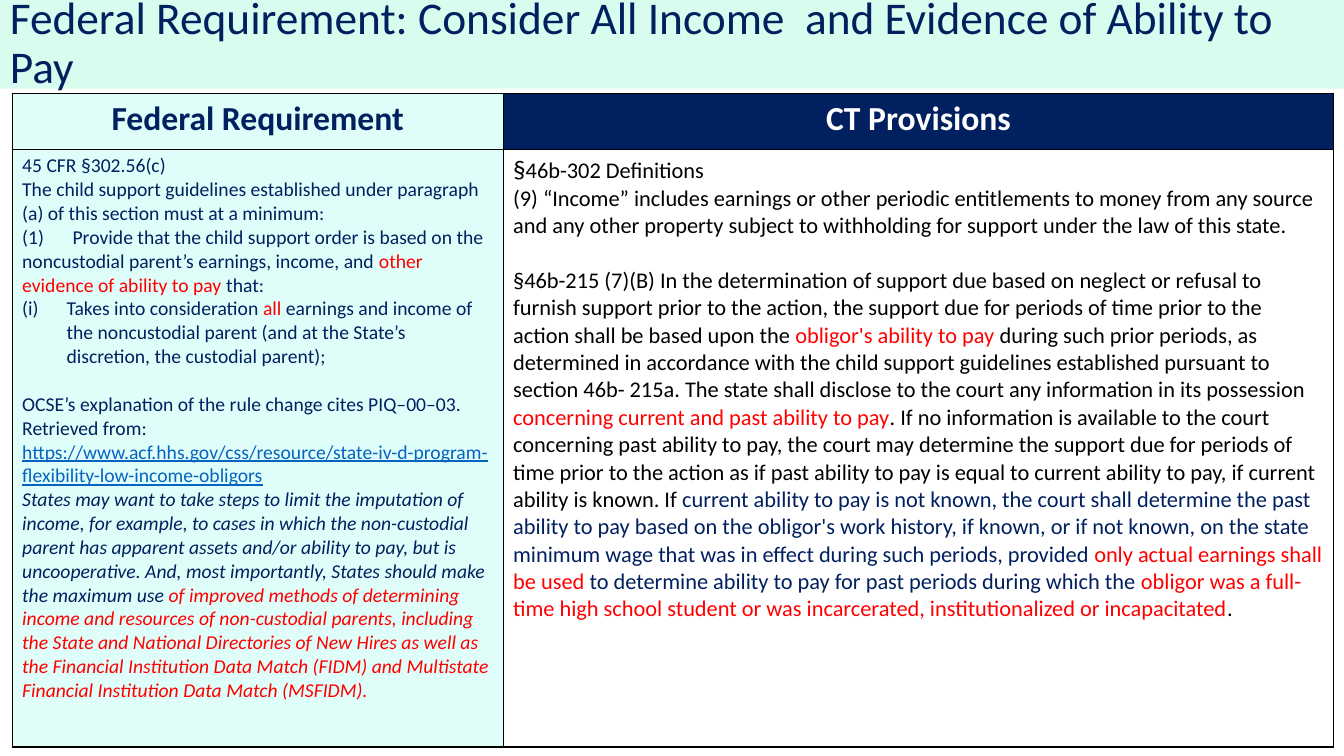
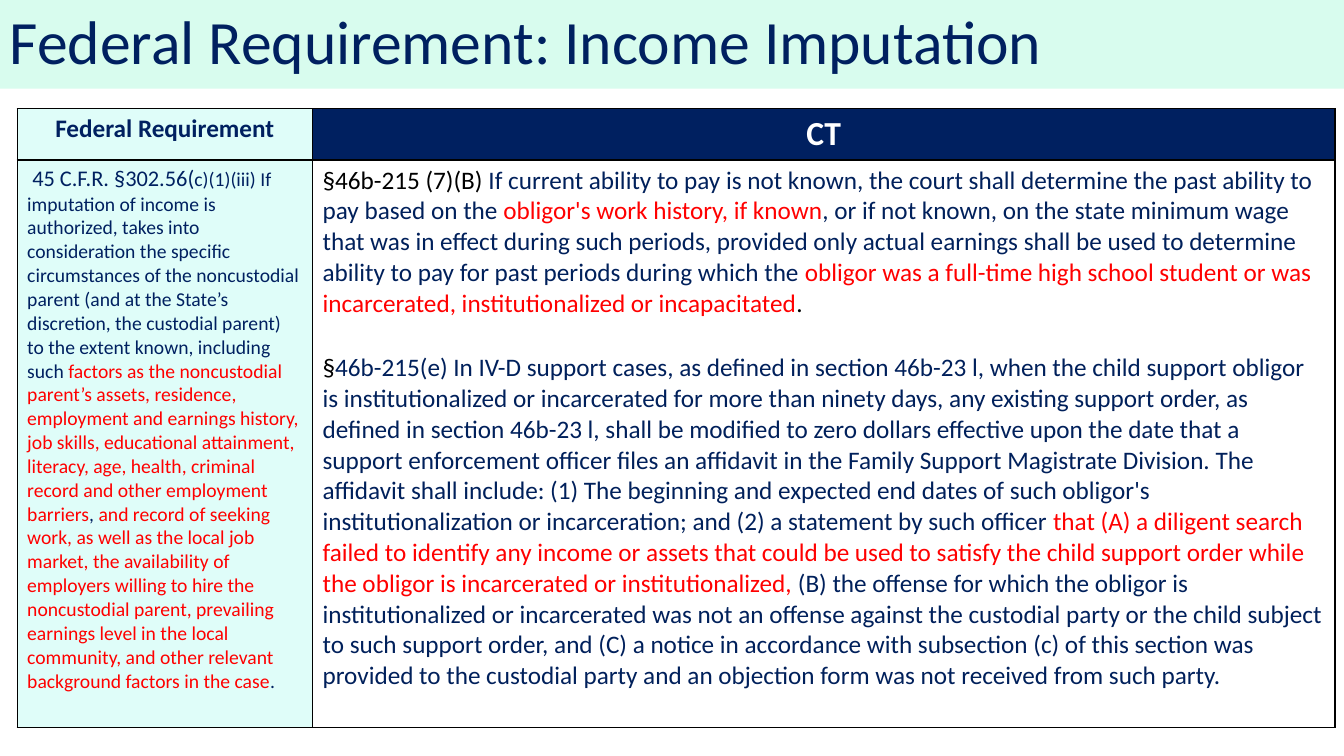
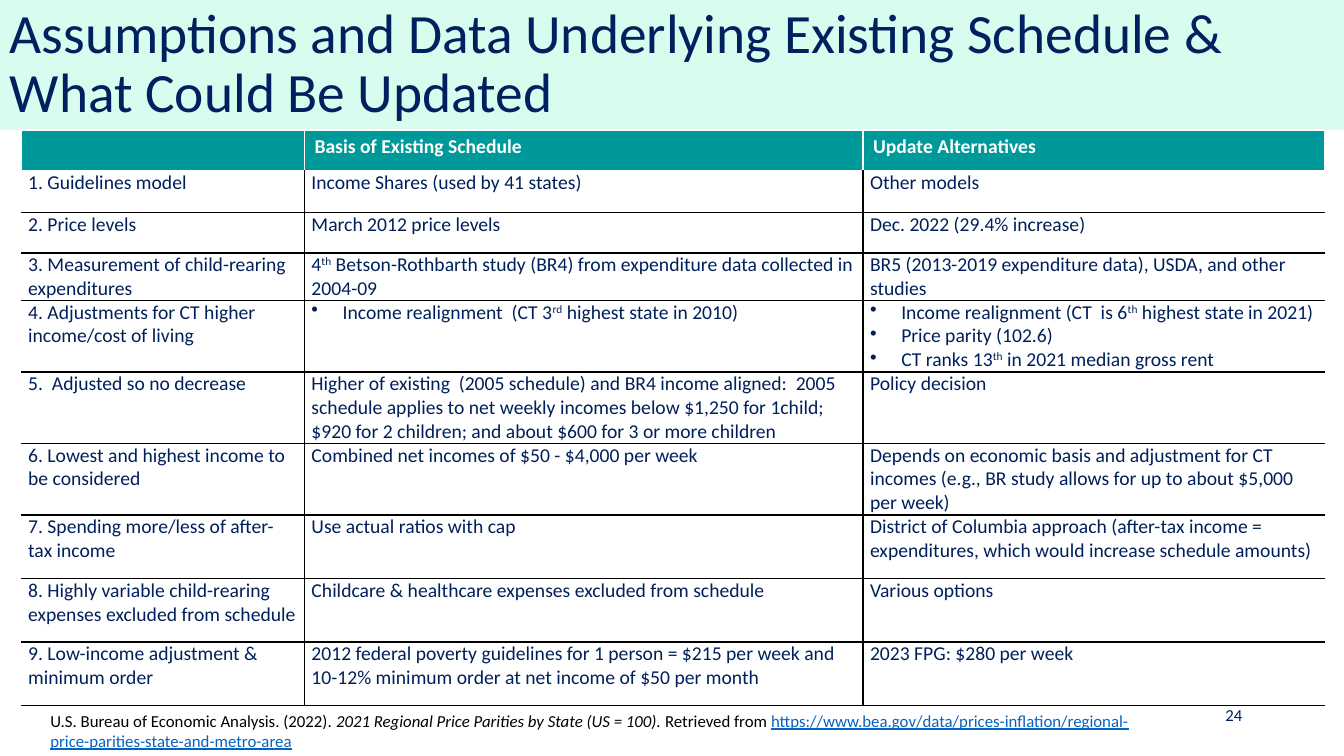
from dataclasses import dataclass, field

import pptx
import pptx.dml.color
import pptx.enum.shapes
import pptx.enum.text
import pptx.oxml
import pptx.oxml.ns
import pptx.util

Inches = pptx.util.Inches
Pt = pptx.util.Pt
ALIGN = pptx.enum.text.PP_ALIGN
ANCHOR = pptx.enum.text.MSO_ANCHOR


class Theme:
    font = "Calibri"
    navy = "002060"
    deep_navy = "00205B"
    red = "FF0000"
    black = "000000"
    white = "FFFFFF"
    link = "0563C1"
    band = "D8FCEE"
    federal = "DFFDF9"
    teal = "009999"
    small, body, medium, large, heading = 12, 14, 16, 18, 24
    width, height = 13.33, 7.5


@dataclass
class Span:
    """A piece of text; unset values come from the box or cell around it."""
    text: str
    color: str = None
    size: float = None
    italic: bool = False
    underline: bool = False
    raised: bool = False


@dataclass
class Para:
    spans: list
    before: float = 0
    bullet: str = None
    left: float = 0
    first: float = 0
    tab: float = None


@dataclass
class Cell:
    paras: list
    fill: str = Theme.white
    color: str = Theme.navy
    size: float = Theme.body
    bold: bool = False
    align: ALIGN = ALIGN.LEFT
    margins: tuple = (0.1, 0.05)
    borders: dict = field(default_factory=lambda: dict.fromkeys("LRTB", Theme.black))


def red(text, **style):
    return Span(text, Theme.red, **style)


def black(text, **style):
    return Span(text, Theme.black, **style)


def link(text):
    return Span(text, Theme.link, underline=True)


def raised(text):
    return Span(text, raised=True)


def bulleted(*spans):
    return Para(list(spans), bullet='<a:buChar {} char="•"/>', left=0.31, first=-0.31)


def rgb(value):
    return pptx.dml.color.RGBColor.from_string(value)


def xml(markup):
    return pptx.oxml.parse_xml(markup.format(pptx.oxml.ns.nsdecls("a")))


class Deck:
    def __init__(self, theme):
        self.theme = theme
        self.deck = pptx.Presentation()
        self.deck.slide_width = Inches(theme.width)
        self.deck.slide_height = Inches(theme.height)
        self.page = None

    def new_page(self, title, size, band_height=0.88):
        self.page = self.deck.slides.add_slide(self.deck.slide_layouts[6])
        band = self.page.shapes.add_shape(
            pptx.enum.shapes.MSO_SHAPE.RECTANGLE, 0, 0,
            Inches(self.theme.width), Inches(band_height))
        band.shadow.inherit = False
        band.fill.solid()
        band.fill.fore_color.rgb = rgb(self.theme.band)
        band.line.fill.background()
        frame = band.text_frame
        frame.word_wrap = True
        frame.vertical_anchor = ANCHOR.MIDDLE
        self.set_paras(frame, [title], size, self.theme.navy)
        frame.paragraphs[0].line_spacing = 0.9

    def set_paras(self, frame, paras, size, color, bold=False, align=ALIGN.LEFT):
        """Fill a text frame; a plain string stands for a one-span paragraph."""
        for index, para in enumerate(paras):
            if isinstance(para, str):
                para = Para([para])
            paragraph = frame.paragraphs[0] if index == 0 else frame.add_paragraph()
            self.indent(paragraph, para)
            paragraph.alignment = align
            paragraph.space_before = Pt(para.before)
            paragraph.font.size = Pt(size)
            for span in para.spans:
                if isinstance(span, str):
                    span = Span(span)
                run = paragraph.add_run()
                run.text = span.text
                font = run.font
                font.name = self.theme.font
                font.size = Pt(span.size or size)
                font.color.rgb = rgb(span.color or color)
                font.bold = bold
                font.italic = span.italic
                font.underline = span.underline
                if span.raised:
                    run._r.get_or_add_rPr().set("baseline", "30000")

    def indent(self, paragraph, para):
        properties = paragraph._p.get_or_add_pPr()
        properties.set("marL", str(Inches(para.left)))
        properties.set("indent", str(Inches(para.first)))
        if para.bullet:
            properties.append(xml(para.bullet))
        if para.tab:
            position = Inches(para.tab)
            properties.append(xml(
                f'<a:tabLst {{}}><a:tab pos="{position}" algn="l"/></a:tabLst>'))

    def text(self, left, top, width, height, paras, align=ALIGN.LEFT,
             anchor=ANCHOR.TOP, color=Theme.navy):
        box = self.page.shapes.add_textbox(
            Inches(left), Inches(top), Inches(width), Inches(height))
        box.text_frame.word_wrap = True
        box.text_frame.vertical_anchor = anchor
        self.set_paras(box.text_frame, paras, self.theme.small, color, align=align)

    def table(self, left, top, widths, heights, rows):
        frame = self.page.shapes.add_table(
            len(heights), len(widths), Inches(left), Inches(top),
            Inches(sum(widths)), Inches(sum(heights)))
        table = frame.table
        table.first_row = table.horz_banding = False
        for column, width in zip(table.columns, widths):
            column.width = Inches(width)
        for row, height in zip(table.rows, heights):
            row.height = Inches(height)
        for row_index, row in enumerate(rows):
            for column_index, cell in enumerate(row):
                self.fill_cell(table.cell(row_index, column_index), cell)

    def fill_cell(self, target, cell):
        side, edge = (Inches(margin) for margin in cell.margins)
        target.margin_left = target.margin_right = side
        target.margin_top = target.margin_bottom = edge
        properties = target._tc.get_or_add_tcPr()
        for name in "LRTB":
            color = cell.borders.get(name)
            paint = (f'<a:solidFill><a:srgbClr val="{color}"/></a:solidFill>'
                     if color else "<a:noFill/>")
            properties.append(xml(f'<a:ln{name} {{}} w="12700">{paint}</a:ln{name}>'))
        target.fill.solid()
        target.fill.fore_color.rgb = rgb(cell.fill)
        self.set_paras(target.text_frame, cell.paras, cell.size, cell.color,
                       cell.bold, cell.align)

    def comparison(self, left, top, widths, heights, headings, heading_size, federal, state):
        """Federal rule on the left, state provisions on the right."""
        theme = self.theme
        heading = dict(bold=True, align=ALIGN.CENTER)
        self.table(left, top, widths, heights, [
            [Cell([headings[0]], theme.federal, size=heading_size, **heading),
             Cell([headings[1]], theme.navy, theme.white, theme.heading, **heading)],
            [federal, state]])

    def schedule(self, left, top, widths, heights, headings, rows):
        theme = self.theme
        white_edges = dict.fromkeys("LRT", theme.white)
        grid = [[Cell([text], theme.teal, theme.white, bold=True, borders=white_edges)
                 for text in headings]]
        last = len(widths) - 1
        for row_index, row in enumerate(rows):
            cells = []
            for column, content in enumerate(row):
                sides = "B" + "T" * (row_index > 0) + "L" * (column > 0) + "R" * (column < last)
                paras = content if isinstance(content, list) else [content]
                cells.append(Cell(paras, color=theme.deep_navy, margins=(0.07, 0),
                                  borders=dict.fromkeys(sides, theme.black)))
            grid.append(cells)
        self.table(left, top, widths, heights, grid)


def build_all_income(deck):
    theme = deck.theme
    deck.new_page("Federal Requirement: Consider All Income  and Evidence of Ability to Pay", 32.4)
    federal = Cell([
        "45 CFR §302.56(c)",
        "The child support guidelines established under paragraph (a) of this section must "
        "at a minimum:",
        Para(["(1)\tProvide that the child support order is based on the noncustodial parent’s "
              "earnings, income, and ", red("other evidence of ability to pay "), "that:"],
             tab=0.4),
        Para(["Takes into consideration ", red("all "),
              "earnings and income of the noncustodial parent (and at the State’s discretion, "
              "the custodial parent);"],
             bullet='<a:buAutoNum {} type="romanLcParenBoth"/>', left=0.44, first=-0.44),
        Para(["OCSE’s explanation of the rule change cites PIQ–00–03. Retrieved from: ",
              link("https://www.acf.hhs.gov/css/resource/"
                   "state-iv-d-program-flexibility-low-income-obligors")], before=17),
        Para([Span("States may want to take steps to limit the imputation of income, for example, "
                   "to cases in which the non-custodial parent has apparent assets and/or ability "
                   "to pay, but is uncooperative. And, most importantly, States should make the "
                   "maximum use ", italic=True),
              red("of improved methods of determining income and resources of non-custodial "
                  "parents, including the State and National Directories of New Hires as well as "
                  "the Financial Institution Data Match (FIDM) and Multistate Financial "
                  "Institution Data Match (MSFIDM).", italic=True)]),
    ], theme.federal)
    state = Cell([
        Para([Span("§", size=theme.large), "46b-302 Definitions"]),
        "(9) “Income” includes earnings or other periodic entitlements to money from any source "
        "and any other property subject to withholding for support under the law of this state.",
        Para([
            "§46b-215 (7)(B) In the determination of support due based on neglect or refusal to "
            "furnish support prior to the action, the support due for periods of time prior to "
            "the action shall be based upon the ",
            red("obligor's ability to pay "),
            "during such prior periods, as determined in accordance with the child support "
            "guidelines established pursuant to section 46b- 215a. The state shall disclose to "
            "the court any information in its possession ",
            red("concerning current and past ability to pay"),
            ". If no information is available to the court concerning past ability to pay, the "
            "court may determine the support due for periods of time prior to the action as if "
            "past ability to pay is equal to current ability to pay, if current ability is "
            "known. If ",
            Span("current ability to pay is not known, the court shall determine the past ability "
                 "to pay based on the obligor's work history, if known, or if not known, on the "
                 "state minimum wage that was in effect during such periods, provided ",
                 theme.navy),
            red("only actual earnings shall be used "),
            Span("to determine ability to pay for past periods during which the ", theme.navy),
            red("obligor was a full-time high school student or was incarcerated, "
                "institutionalized or incapacitated"),
            "."], before=19.5),
    ], color=theme.black, size=theme.medium)
    deck.comparison(0.12, 0.93, [4.87, 8.24], [0.55, 5.93],
                    ["Federal Requirement", "CT Provisions"], theme.heading, federal, state)


def build_imputation(deck):
    theme = deck.theme
    deck.new_page("Federal Requirement: Income Imputation", 44)
    federal = Cell([Para([
        Span("45 C.F.R. §302.56(", size=theme.medium),
        "c)(1)(iii) If imputation of income is authorized, takes into consideration the specific "
        "circumstances of the noncustodial parent (and at the State’s discretion, the custodial "
        "parent) to the extent known, including such ",
        red("factors as the noncustodial parent’s assets, residence, employment and earnings "
            "history, job skills, educational attainment, literacy, age, health, criminal record "
            "and other employment barriers"),
        ", ",
        red("and record of seeking work, as well as the local job market, the availability of "
            "employers willing to hire the noncustodial parent, prevailing earnings level in the "
            "local community, and other relevant background factors in the case"),
        "."], first=0.05)], theme.federal)
    state = Cell([
        Para([
            black("§46b-215 (7)(B) "),
            "If current ability to pay is not known, the court shall determine the past ability "
            "to pay based on the",
            red(" obligor's work history, if known"),
            ", or if not known, on the state minimum wage that was in effect during such periods, "
            "provided only actual earnings shall be used to determine ability to pay for past "
            "periods during which the ",
            red("obligor was a full-time high school student or was incarcerated, "
                "institutionalized or incapacitated"),
            black(".")]),
        Para([
            black("§"),
            "46b-215(e) In IV-D support cases, as defined in section 46b-23 l, when the child "
            "support obligor is institutionalized or incarcerated for more than ninety days, any "
            "existing support order, as defined in section 46b-23 l, shall be modified to zero "
            "dollars effective upon the date that a support enforcement officer files an "
            "affidavit in the Family Support Magistrate Division. The affidavit shall include: "
            "(1) The beginning and expected end dates of such obligor's institutionalization or "
            "incarceration; and (2) a statement by such officer ",
            red("that (A) a diligent search failed to identify any income or assets that could be "
                "used to satisfy the child support order while the obligor is incarcerated or "
                "institutionalized, "),
            "(B) the offense for which the obligor is institutionalized or incarcerated was not "
            "an offense against the custodial party or the child subject to such support order, "
            "and (C) a notice in accordance with subsection (c) of this section was provided to "
            "the custodial party and an objection form was not received from such party.",
        ], before=24.4),
    ], color=theme.deep_navy, size=theme.large)
    deck.comparison(0.17, 1.08, [2.93, 10.14], [0.5, 5.63],
                    ["Federal Requirement", "CT"], theme.large, federal, state)


def build_schedule(deck):
    deck.new_page("Assumptions and Data Underlying Existing Schedule & What Could Be Updated",
                  39.6, band_height=1.29)
    deck.text(11.94, 6.97, 0.48, 0.24, ["24"], ALIGN.RIGHT, ANCHOR.MIDDLE)
    rows = [
        ["1. Guidelines model", "Income Shares (used by 41 states)", "Other models"],
        ["2. Price levels", "March 2012 price levels", "Dec. 2022 (29.4% increase)"],
        ["3. Measurement of child-rearing expenditures",
         Para(["4", raised("th"), " Betson-Rothbarth study (BR4) from expenditure data "
               "collected in 2004-09"]),
         "BR5 (2013-2019 expenditure data), USDA, and other studies"],
        ["4. Adjustments for CT higher income/cost of living",
         bulleted("Income realignment  (CT 3", raised("rd"), " highest state in 2010)"),
         [bulleted("Income realignment (CT  is 6", raised("th"), " highest state in 2021)"),
          bulleted("Price parity (102.6)"),
          bulleted("CT ranks 13", raised("th"), " in 2021 median gross rent")]],
        ["5.  Adjusted so no decrease",
         "Higher of existing  (2005 schedule) and BR4 income aligned:  2005 schedule applies to "
         "net weekly incomes below $1,250 for 1child; $920 for 2 children; and about $600 for 3 "
         "or more children",
         "Policy decision"],
        ["6. Lowest and highest income to be considered",
         "Combined net incomes of $50 - $4,000 per week",
         "Depends on economic basis and adjustment for CT incomes (e.g., BR study allows for up "
         "to about $5,000 per week)"],
        ["7. Spending more/less of after-tax income", "Use actual ratios with cap",
         "District of Columbia approach (after-tax income = expenditures, which would increase "
         "schedule amounts)"],
        ["8. Highly variable child-rearing expenses excluded from schedule",
         "Childcare & healthcare expenses excluded from schedule", "Various options"],
        ["9. Low-income adjustment & minimum order",
         "2012 federal poverty guidelines for 1 person = $215 per week and 10-12% minimum order "
         "at net income of $50 per month",
         "2023 FPG: $280 per week"],
    ]
    deck.schedule(0.21, 1.29, [2.81, 5.54, 4.58],
                  [0.39, 0.42, 0.4, 0.47] + [0.71] * 3 + [0.63] * 3,
                  ["", "Basis of Existing Schedule", "Update Alternatives"], rows)
    deck.text(0.4, 7, 11.22, 0.5, [Para([
        "U.S. Bureau of Economic Analysis. (2022). ",
        Span("2021 Regional Price Parities by State (US = 100).", italic=True),
        " Retrieved from ",
        link("https://www.bea.gov/data/prices-inflation/"
             "regional-price-parities-state-and-metro-area")])], color=deck.theme.black)


def main():
    deck = Deck(Theme)
    build_all_income(deck)
    build_imputation(deck)
    build_schedule(deck)
    deck.deck.save("out.pptx")


if __name__ == "__main__":
    main()
